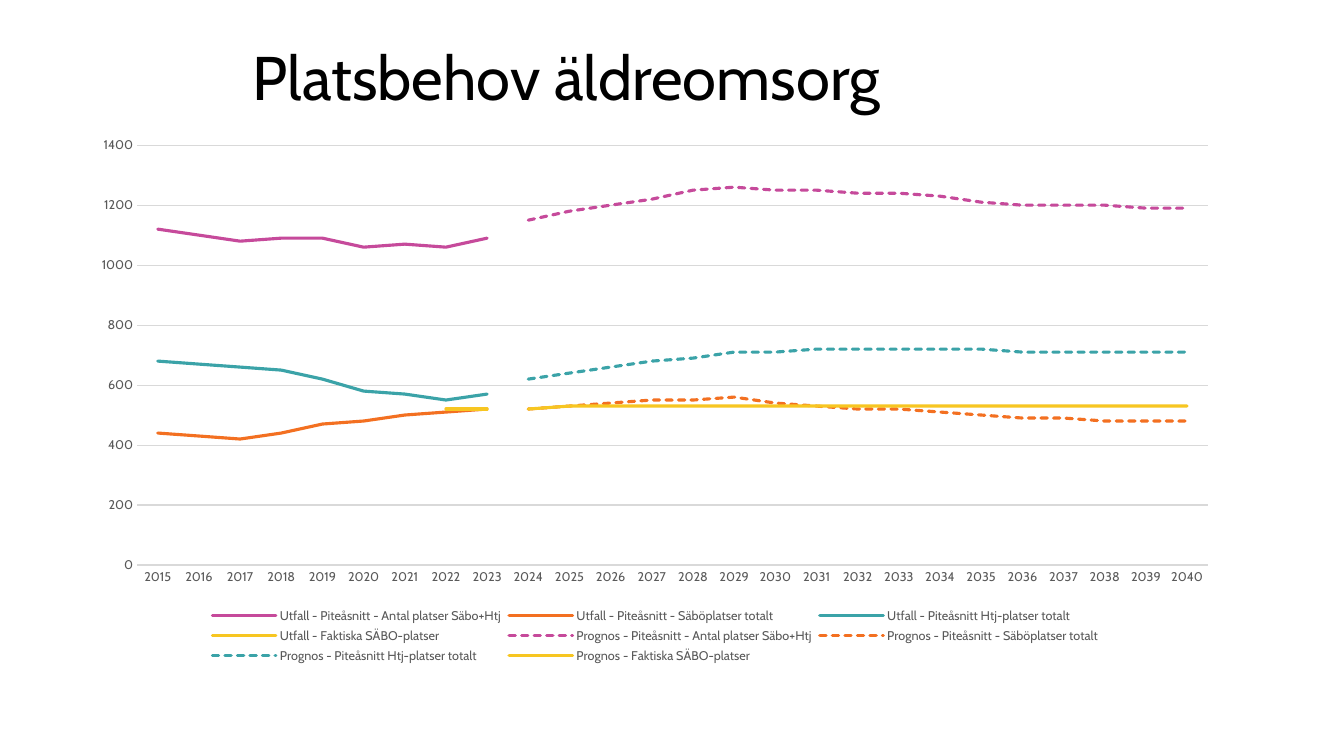
from dataclasses import dataclass

from pptx import Presentation
from pptx import util as u
from pptx.chart import data as cd
from pptx.dml.color import RGBColor
from pptx.enum import chart as ec
from pptx.enum import dml, text
from pptx.oxml import parse_xml
from pptx.oxml.ns import nsdecls


@dataclass(frozen=True)
class Theme:
    """Colours, font and sizes of the slide."""
    font: str = "Cabin"
    black: str = "000000"
    grey: str = "595959"
    rule: str = "D9D9D9"
    pink: str = "C64A9B"
    orange: str = "F37021"
    teal: str = "3BA3A8"
    gold: str = "F7C621"
    head: float = 44
    base: float = 10
    small: float = 9
    thin: float = 0.75
    thick: float = 2.25


T = Theme()
YEARS = range(2015, 2041)
SPLIT = 2024
LINES = [
    ("Utfall - Piteåsnitt - Antal platser Säbo+Htj", T.pink, 2015, False,
     [1120, 1100, 1080, 1090, 1090, 1060, 1070, 1060, 1090]),
    ("Utfall - Piteåsnitt - Säböplatser totalt", T.orange, 2015, False,
     [440, 430, 420, 440, 470, 480, 500, 510, 520]),
    ("Utfall - Piteåsnitt Htj-platser totalt", T.teal, 2015, False,
     [680, 670, 660, 650, 620, 580, 570, 550, 570]),
    ("Utfall - Faktiska SÄBO-platser", T.gold, 2022, False, [520, 520]),
    ("Prognos - Piteåsnitt - Antal platser Säbo+Htj", T.pink, SPLIT, True,
     [1150, 1180, 1200, 1220, 1250, 1260, 1250, 1250, 1240, 1240, 1230,
      1210, 1200, 1200, 1200, 1190, 1190]),
    ("Prognos - Piteåsnitt - Säböplatser totalt", T.orange, SPLIT, True,
     [520, 530, 540, 550, 550, 560, 540, 530, 520, 520, 510, 500, 490,
      490, 480, 480, 480]),
    ("Prognos - Piteåsnitt Htj-platser totalt", T.teal, SPLIT, True,
     [620, 640, 660, 680, 690, 710, 710, 720, 720, 720, 720, 720, 710,
      710, 710, 710, 710]),
    ("Prognos - Faktiska SÄBO-platser", T.gold, SPLIT, False,
     [520] + [530] * 16),
]


def style(font, size, tint):
    """Set the face, size and colour of a font."""
    font.name, font.size = T.font, u.Pt(size)
    font.color.rgb = RGBColor.from_string(tint)


def stroke(line, tint, width):
    """Set the colour and width of a line."""
    line.color.rgb = RGBColor.from_string(tint)
    line.width = u.Pt(width)


def title(slide, box, words):
    """Place and format the title in its box."""
    head = slide.shapes.title
    head.left, head.top, head.width, head.height = map(u.Pt, box)
    frame = head.text_frame
    frame.auto_size = text.MSO_AUTO_SIZE.NONE
    frame.vertical_anchor = text.MSO_ANCHOR.MIDDLE
    para = frame.paragraphs[0]
    para.alignment = text.PP_ALIGN.LEFT
    para.line_spacing = 0.9
    run = para.add_run()
    run.text = words
    style(run.font, T.head, T.black)


def layout(chart, **parts):
    """Fix the inner plot as shares of the chart's box."""
    area = chart.element.xpath("c:chart/c:plotArea")[0]
    for old in area.xpath("c:layout"):
        area.remove(old)
    sizes = "".join(f'<c:{k} val="{v}"/>' for k, v in parts.items())
    area.insert(0, parse_xml(
        f'<c:layout {nsdecls("c")}><c:manualLayout>'
        '<c:layoutTarget val="inner"/><c:xMode val="edge"/>'
        f'<c:yMode val="edge"/>{sizes}</c:manualLayout></c:layout>'))


def axes(chart):
    """Format both axes and the grid."""
    years, count = chart.category_axis, chart.value_axis
    for axis in (years, count):
        axis.major_tick_mark = axis.minor_tick_mark = ec.XL_TICK_MARK.NONE
        style(axis.tick_labels.font, T.small, T.grey)
    stroke(years.format.line, T.rule, T.thin)
    count.format.line.fill.background()
    count.minimum_scale, count.maximum_scale = 0, 1400
    count.major_unit = 200
    count.has_major_gridlines = True
    stroke(count.major_gridlines.format.line, T.rule, T.thin)


def graph(slide, box):
    """Draw the outcome and forecast lines in the box."""
    data = cd.CategoryChartData()
    data.categories = [str(year) for year in YEARS]
    for name, _, start, _, vals in LINES:
        lead = [None] * (start - YEARS[0])
        tail = [None] * (len(YEARS) - len(lead) - len(vals))
        data.add_series(name, lead + vals + tail)
    chart = slide.shapes.add_chart(
        ec.XL_CHART_TYPE.LINE, *map(u.Pt, box), data).chart
    style(chart.font, T.base, T.black)
    chart.has_title = False
    chart.has_legend = True
    chart.legend.position = ec.XL_LEGEND_POSITION.BOTTOM
    chart.legend.include_in_layout = False
    style(chart.legend.font, T.small, T.grey)
    axes(chart)
    plot = chart.plots[0]
    plot.vary_by_categories = False
    for item, (_, tint, _, dash, _) in zip(plot.series, LINES):
        item.smooth = False
        item.marker.style = ec.XL_MARKER_STYLE.NONE
        stroke(item.format.line, tint, T.thick)
        if dash:
            item.format.line.dash_style = dml.MSO_LINE.SQUARE_DOT
    for line in chart.element.xpath(".//c:ser/c:spPr/a:ln"):
        line.set("cap", "rnd")
    layout(chart, x=0.05, y=0.03, w=0.93, h=0.78)


def main():
    """Build and save the slide."""
    deck = Presentation()
    deck.slide_width, deck.slide_height = u.Pt(960), u.Pt(540)
    slide = deck.slides.add_slide(deck.slide_layouts[5])
    title(slide, (173.5, 28.8, 720.7, 57.6), "Platsbehov äldreomsorg")
    graph(slide, (56.9, 92.2, 822.2, 384.5))
    deck.save("out.pptx")


if __name__ == "__main__":
    main()
